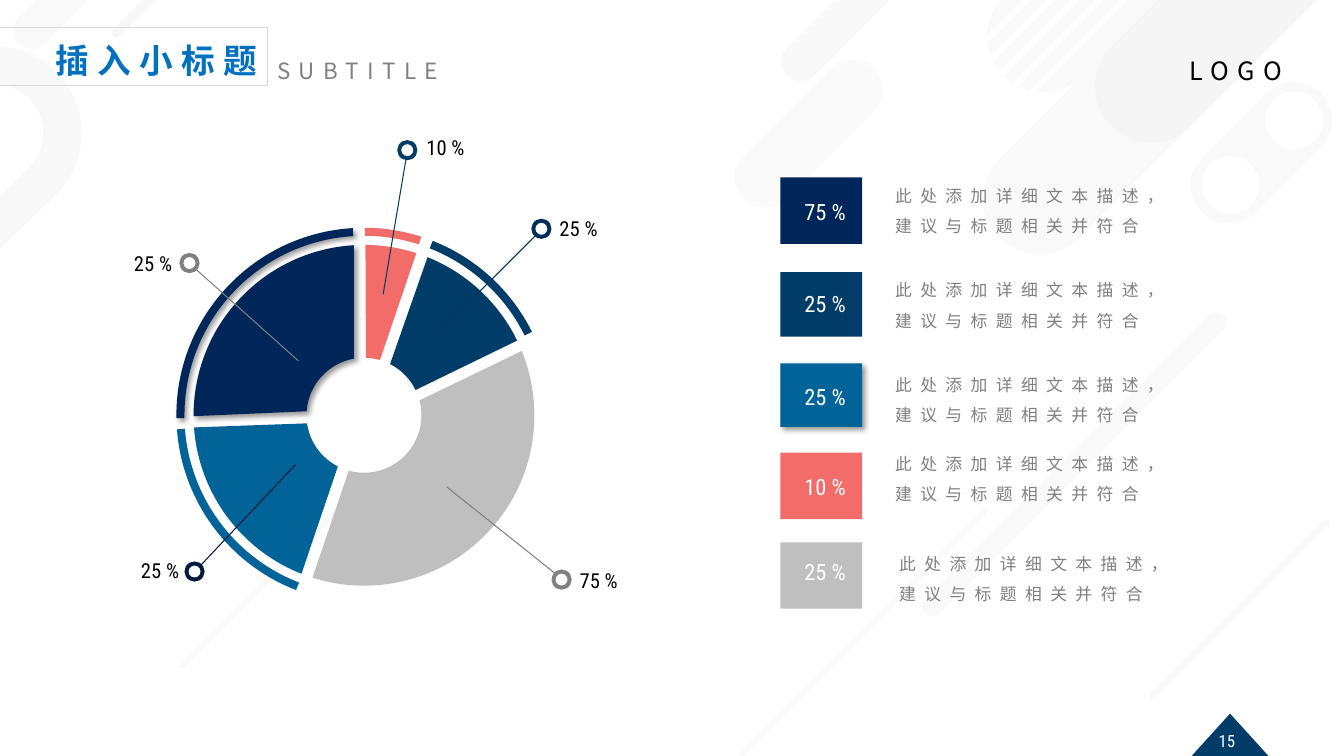
"""Builds a slide with an exploded ring chart, callouts and a five-row legend."""
from math import cos, radians, sin, tan
from typing import NamedTuple, Optional
from lxml import etree
from pptx import Presentation
from pptx.dml.color import RGBColor
from pptx.enum.shapes import MSO_CONNECTOR, MSO_SHAPE
from pptx.enum.text import MSO_ANCHOR, MSO_AUTO_SIZE, PP_ALIGN
from pptx.oxml.ns import qn
from pptx.util import Inches, Pt

RECTANGLE, CAPSULE, OVAL = MSO_SHAPE.RECTANGLE, MSO_SHAPE.ROUNDED_RECTANGLE, MSO_SHAPE.OVAL
DONUT, TRIANGLE, STRAIGHT = MSO_SHAPE.DONUT, MSO_SHAPE.ISOSCELES_TRIANGLE, MSO_CONNECTOR.STRAIGHT
TOP, MIDDLE, BOTTOM = MSO_ANCHOR.TOP, MSO_ANCHOR.MIDDLE, MSO_ANCHOR.BOTTOM
LEFT, RIGHT, NO_AUTOFIT = PP_ALIGN.LEFT, PP_ALIGN.RIGHT, MSO_AUTO_SIZE.NONE
WHITE, BLACK = RGBColor(255, 255, 255), RGBColor(0, 0, 0)
PALE, SILVER = RGBColor(0xF2, 0xF2, 0xF2), RGBColor(0xBF, 0xBF, 0xBF)
BORDER, GREY = RGBColor(0xD9, 0xD9, 0xD9), RGBColor(0x80, 0x80, 0x80)
NAVY, PETROL = RGBColor(0x00, 0x26, 0x5A), RGBColor(0x01, 0x3D, 0x68)
BLUE, CORAL = RGBColor(0x01, 0x63, 0x98), RGBColor(0xF2, 0x6D, 0x69)
INDIGO, MIDNIGHT = RGBColor(0x00, 0x2E, 0x5A), RGBColor(0x00, 0x19, 0x3C)
TITLE_BLUE = RGBColor(0x00, 0x70, 0xC0)
CHINESE, JAPANESE, CONDENSED = "Noto Sans CJK SC", "Noto Sans CJK JP", "Roboto Condensed"
DESCRIPTION = "此处添加详细文本描述，建议与标题相关并符合"
CENTER, MARKER = (3.61, 4.12), 0.2
HOLE, RADIUS, RIM_INNER, RIM_OUTER = 0.57, 1.69, 1.78, 1.86
Point = tuple[float, float]

class Knot(NamedTuple):
    point: Point
    controls: tuple[Point, ...] = ()

class Bar(NamedTuple):
    left: float
    top: float
    width: float
    height: float
    opacity: int = 100
    color: RGBColor = PALE

class Slice(NamedTuple):
    color: RGBColor
    outer: Point
    inner: Point
    rim: Optional[Point] = None
    shadow: bool = False

class Callout(NamedTuple):
    text: str
    color: RGBColor
    start: Point
    end: Point
    marker: Point
    label: Point

class LegendRow(NamedTuple):
    text: str
    color: RGBColor
    middle: float
    height: float
    label_top: float
    description: Point
    shadow: bool = False

BARS = [
    Bar(11.53, -2.88, 1.11, 6.14, 46), Bar(12.64, -3.99, 1.11, 6.14, 50),
    Bar(11.57, -4.49, 1.11, 6.14, 45), Bar(12.13, 0.68, 0.76, 1.67, 40),
    *[Bar(9.69 + 0.97 * i / 4, -2.39, 0.06, 5.7, color=WHITE) for i in range(5)],
    Bar(2.53, 4.76, 0.05, 2.19, 45), Bar(8.29, 4.44, 0.05, 4.17, 40),
    Bar(10.56, 2.51, 0.2, 4.19, 40), Bar(7.72, 0.41, 0.6, 1.83, 37),
    Bar(8.26, -0.81, 0.38, 1.83, 50), Bar(12.26, 4.8, 0.07, 2.49, 40),
    Bar(1.57, -0.83, 0.09, 1.39, 60), Bar(0.49, -0.75, 0.37, 1.38, 40),
]
SLICES = [
    Slice(PETROL, (21.9, 64), (27, 63.9), (21.5, 63.6)),
    Slice(CORAL, (0.5, 17.9), (2, 16.2), (0.3, 17.8)),
    Slice(SILVER, (67.8, 197.6), (75, 195.3)),
    Slice(BLUE, (201.5, 265.9), (207, 261.9), (201.2, 265.7)),
    Slice(NAVY, (269.7, 356.6), (274, 349.9), (269.1, 356.6), True),
]
CALLOUTS = [
    Callout("25 %", INDIGO, (4.35, 3.3), (5.33, 2.32), (5.37, 2.27), (5.45, 2.09)),
    Callout("10 %", PETROL, (3.8, 2.92), (4.03, 1.56), (4.04, 1.49), (4.13, 1.29)),
    Callout("75 %", GREY, (4.43, 4.83), (5.52, 5.7), (5.57, 5.75), (5.65, 5.58)),
    Callout("25 %", MIDNIGHT, (2.93, 4.61), (1.98, 5.62), (1.93, 5.67), (1.3, 5.49)),
    Callout("25 %", GREY, (2.96, 3.58), (1.92, 2.65), (1.88, 2.61), (1.23, 2.44)),
]
LEGEND = [
    LegendRow("75 %", NAVY, 2.09, 0.66, 1.92, (8.78, 1.69)),
    LegendRow("25 %", PETROL, 3.02, 0.64, 2.83, (8.78, 2.63)),
    LegendRow("25 %", BLUE, 3.92, 0.63, 3.75, (8.78, 3.57), True),
    LegendRow("10 %", CORAL, 4.82, 0.66, 4.64, (8.78, 4.35)),
    LegendRow("25 %", SILVER, 5.71, 0.66, 5.49, (8.82, 5.34)),
]

def paint(shape, color: RGBColor, opacity: int = 100, shadow: bool = False) -> None:
    shape.fill.solid()
    shape.fill.fore_color.rgb = color
    shape.line.fill.background()
    shape.shadow.inherit = False
    if opacity < 100:
        tint = shape.element.xpath("./p:spPr/a:solidFill/a:srgbClr")[0]
        etree.SubElement(tint, qn("a:alpha"), val=str(opacity * 1000))
    if shadow:
        effects = shape.element.xpath("./p:spPr/a:effectLst")[0]
        outer = etree.SubElement(effects, qn("a:outerShdw"), blurRad=str(Pt(4)),
                                 dist=str(Pt(3)), dir="2700000", algn="tl", rotWithShape="0")
        black = etree.SubElement(outer, qn("a:srgbClr"), val="000000")
        etree.SubElement(black, qn("a:alpha"), val="40000")

def add_preset(slide, kind, left: float, top: float, width: float, height: float, color: RGBColor,
               opacity: int = 100, shadow: bool = False):
    shape = slide.shapes.add_shape(kind, *map(Inches, (left, top, width, height)))
    paint(shape, color, opacity, shadow)
    return shape

def write(shape, text: str, size: float, font: str, color: RGBColor, spacing: int = 0,
          align=LEFT, anchor=TOP, wrap: bool = True, bold: bool = False):
    frame = shape.text_frame
    frame.word_wrap, frame.auto_size, frame.vertical_anchor = wrap, NO_AUTOFIT, anchor
    frame.text = text
    paragraph = frame.paragraphs[0]
    paragraph.alignment = align
    paragraph.font.name, paragraph.font.size = font, Pt(size)
    paragraph.font.bold, paragraph.font.color.rgb = bold, color
    properties = shape.element.xpath(".//a:pPr/a:defRPr")[0]
    properties.set("spc", str(spacing * 100))
    etree.SubElement(properties, qn("a:ea"), typeface=font)
    return paragraph

def add_text(slide, left: float, top: float, width: float, height: float, *content, **style):
    box = slide.shapes.add_textbox(*map(Inches, (left, top, width, height)))
    return write(box, *content, **style)

def arc(center: Point, radius: float, start: float, end: float) -> list[Knot]:
    low, high = sorted((start, end))
    quarters = [angle for angle in (90, 180, 270) if low < angle < high]
    angles = [radians(a) for a in sorted([start, *quarters, end], reverse=end < start)]
    def place(angle: float, reach: float = 0) -> Point:
        return (center[0] + radius * (sin(angle) + reach * cos(angle)),
                center[1] - radius * (cos(angle) - reach * sin(angle)))
    knots = [Knot(place(angles[0]))]
    for a, b in zip(angles, angles[1:]):
        reach = 4 / 3 * tan((b - a) / 4)
        knots.append(Knot(place(b), (place(a, reach), place(b, -reach))))
    return knots

def add_outline(slide, knots: list[Knot], color: RGBColor, opacity: int = 100,
                shadow: bool = False) -> None:
    corners = [(Inches(x), Inches(y)) for x, y in (knot.point for knot in knots)]
    builder = slide.shapes.build_freeform(*corners[0])
    builder.add_line_segments(corners[1:], close=True)
    shape = builder.convert_to_shape()
    for line, knot in zip(shape.element.xpath(".//a:lnTo"), knots[1:]):
        if knot.controls:
            curve = etree.Element(qn("a:cubicBezTo"))
            for x, y in knot.controls:
                etree.SubElement(curve, qn("a:pt"), x=str(Inches(x) - shape.left),
                                 y=str(Inches(y) - shape.top))
            curve.append(line[0])
            line.getparent().replace(line, curve)
    paint(shape, color, opacity, shadow)

def add_background(slide) -> None:
    add_preset(slide, TRIANGLE, 11.81, 7.08, 0.78, 0.43, PETROL)
    add_text(slide, 11.78, 7.21, 0.57, 0.28, "15", 12, CONDENSED, WHITE, align=RIGHT, anchor=MIDDLE)
    hook = (-0.05, 1.32)
    add_outline(slide, arc(hook, 0.86, 3.3, 135) + [Knot((0, 2.47)), Knot((0, 1.95))]
                + arc(hook, 0.48, 135, 6), PALE, 50)
    for bar in BARS:
        capsule = add_preset(slide, CAPSULE, *bar[:4], bar.color, bar.opacity)
        capsule.adjustments[0], capsule.rotation = 0.5, 45
    for left, top in [(12.55, 0.91), (11.92, 1.55)]:
        add_preset(slide, OVAL, left, top, 0.57, 0.57, WHITE)

def add_header(slide) -> None:
    title = slide.shapes.title
    slide.shapes.element.append(title.element)
    title.left, title.top, title.width, title.height = map(Inches, (-1.13, 0.27, 3.78, 0.58))
    title.line.color.rgb, title.line.width = BORDER, Pt(0.75)
    write(title, "插入小标题", 24, CHINESE, TITLE_BLUE, 6, RIGHT, BOTTOM, bold=True)
    add_text(slide, 2.65, 0.52, 1.88, 0.37, "SUBTITLE", 16, JAPANESE, GREY, 6, wrap=False)
    add_text(slide, 11.7, 0.5, 1.26, 0.4, "LOGO", 18, CHINESE, BLACK, 6, wrap=False)

def add_sector(slide, part: Slice, outer: Point, inner: Point, far: float, near: float) -> None:
    knots = arc(CENTER, far, *outer) + arc(CENTER, near, *reversed(inner))
    add_outline(slide, knots, part.color, shadow=part.shadow)

def add_callout(slide, callout: Callout) -> None:
    line = slide.shapes.add_connector(STRAIGHT, *map(Inches, callout.start + callout.end))
    line.line.color.rgb, line.line.width = callout.color, Pt(0.75)
    etree.SubElement(line.element.spPr, qn("a:effectLst"))
    x, y = callout.marker
    ring = add_preset(slide, DONUT, x - MARKER / 2, y - MARKER / 2, MARKER, MARKER, callout.color)
    ring.adjustments[0] = 0.2
    add_text(slide, *callout.label, 0.65, 0.35, callout.text, 14.7, CONDENSED, BLACK)

def add_legend_row(slide, row: LegendRow) -> None:
    add_text(slide, *row.description, 3.1, 0.71, DESCRIPTION, 12, CHINESE, GREY, 6).line_spacing = 1.5
    add_preset(slide, RECTANGLE, 7.74, row.middle - row.height / 2, 0.81, row.height, row.color,
               shadow=row.shadow)
    add_text(slide, 7.88, row.label_top, 0.75, 0.37, row.text, 16, CONDENSED, WHITE)

def main() -> None:
    presentation = Presentation()
    presentation.slide_width, presentation.slide_height = Inches(13.33), Inches(7.5)
    slide = presentation.slides.add_slide(presentation.slide_layouts[5])
    add_background(slide)
    add_header(slide)
    for part in SLICES:
        add_sector(slide, part, part.outer, part.inner, RADIUS, HOLE)
        if part.rim:
            add_sector(slide, part, part.rim, part.rim, RIM_OUTER, RIM_INNER)
    for callout in CALLOUTS:
        add_callout(slide, callout)
    for row in LEGEND:
        add_legend_row(slide, row)
    presentation.save("out.pptx")

if __name__ == "__main__":
    main()
